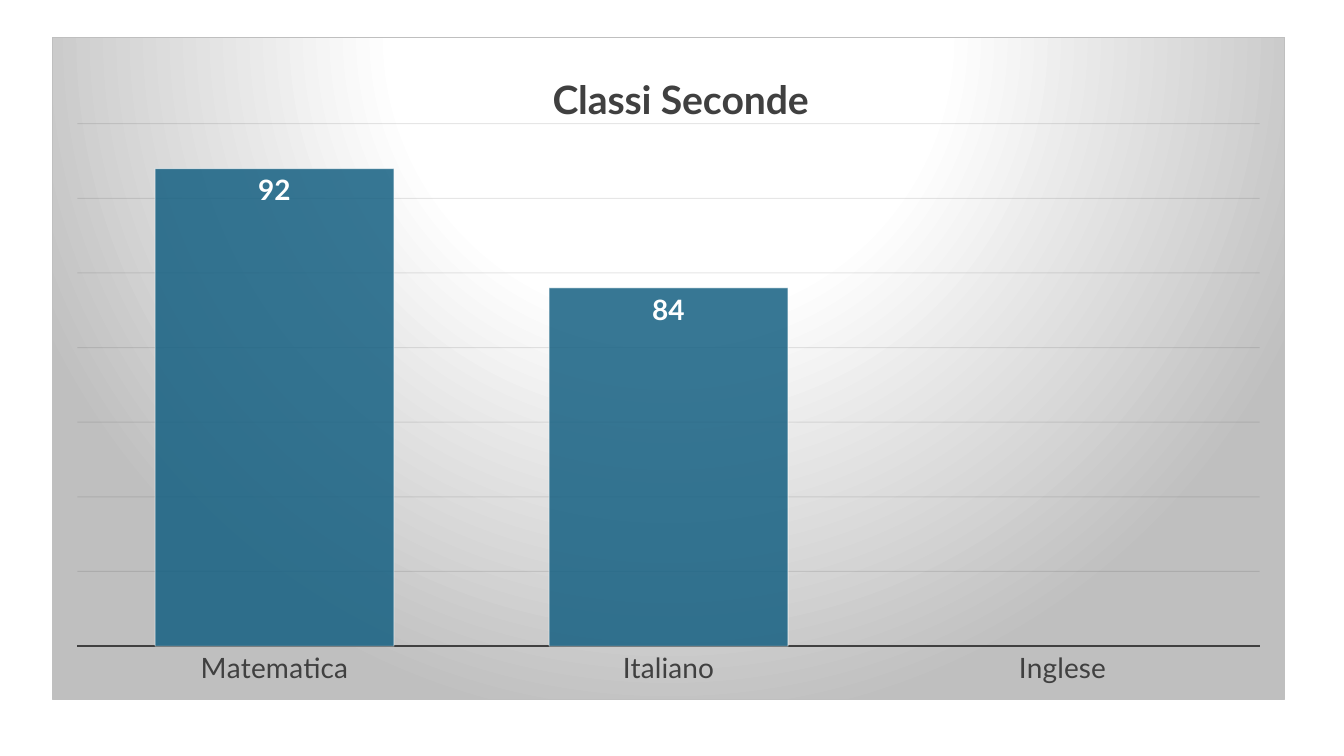
"""Build a slide with a column chart of the scores of the second-year classes."""
from typing import NamedTuple

import lxml.etree
import pptx
import pptx.chart.data
import pptx.dml.color
import pptx.enum.chart
import pptx.oxml
import pptx.oxml.ns
import pptx.util

COLORS = {
    "bar": "156082",
    "text": "404040",
    "grid": "0D0D0D",
    "edge": "BFBFBF",
    "white": "FFFFFF",
}
FONT = "Lato"


class Score(NamedTuple):
    """A subject and its score, if there is one."""

    subject: str
    value: float | None


class Stop(NamedTuple):
    """A gradient stop, with its position in percent."""

    position: int
    color: str


SCORES = [Score("Matematica", 92), Score("Italiano", 84), Score("Inglese", None)]
STOPS = [Stop(0, "white"), Stop(39, "white"), Stop(100, "edge")]


def rgb(name: str) -> pptx.dml.color.RGBColor:
    """Return a named colour."""
    return pptx.dml.color.RGBColor.from_string(COLORS[name])


def style_font(font, size: int, color: str, bold: bool = False) -> None:
    """Set the face, size, colour and weight of a font."""
    font.name = FONT
    font.size = pptx.util.Pt(size)
    font.bold = bold
    font.color.rgb = rgb(color)


def style_line(line, color: str, width: float) -> None:
    """Set the colour and width of a line."""
    line.color.rgb = rgb(color)
    line.width = pptx.util.Pt(width)


def set_opacity(chart, query: str, percent: int) -> None:
    """Set the opacity of the colours that a query finds in the chart."""
    for color in chart.element.xpath(query):
        alpha = lxml.etree.SubElement(color, pptx.oxml.ns.qn("a:alpha"))
        alpha.set("val", str(percent * 1000))


def set_layout(parent, index: int, **fractions: float) -> None:
    """Place a chart part by fractions of the chart's size."""
    for old in parent.findall(pptx.oxml.ns.qn("c:layout")):
        parent.remove(old)
    target = '<c:layoutTarget val="inner"/>' if "w" in fractions else ""
    modes = "".join(f'<c:{k}Mode val="edge"/>' for k in fractions if k in "xy")
    values = "".join(f'<c:{k} val="{v}"/>' for k, v in fractions.items())
    parent.insert(index, pptx.oxml.parse_xml(
        f'<c:layout {pptx.oxml.ns.nsdecls("c")}><c:manualLayout>'
        f"{target}{modes}{values}</c:manualLayout></c:layout>"))


def fill_background(chart) -> None:
    """Give the chart area its radial gradient and thin border."""
    stops = "".join(
        f'<a:gs pos="{s.position * 1000}"><a:srgbClr val="{COLORS[s.color]}"/></a:gs>'
        for s in STOPS)
    area = pptx.oxml.parse_xml(
        f'<c:spPr {pptx.oxml.ns.nsdecls("c", "a")}>'
        f'<a:gradFill><a:gsLst>{stops}</a:gsLst><a:path path="circle">'
        '<a:fillToRect l="50000" t="-80000" r="50000" b="180000"/></a:path></a:gradFill>'
        f'<a:ln w="{pptx.util.Pt(0.75)}"><a:solidFill><a:srgbClr val="{COLORS["edge"]}"/>'
        "</a:solidFill></a:ln></c:spPr>")
    chart.element.find(pptx.oxml.ns.qn("c:txPr")).addprevious(area)


def style_axes(chart) -> None:
    """Style the category axis, and hide the value axis but keep its gridlines."""
    none = pptx.enum.chart.XL_TICK_MARK.NONE
    subjects, values = chart.category_axis, chart.value_axis
    subjects.major_tick_mark = subjects.minor_tick_mark = none
    style_font(subjects.tick_labels.font, 20, "text")
    style_line(subjects.format.line, "text", 1.5)
    values.minimum_scale, values.maximum_scale, values.major_unit = 60, 95, 5
    values.has_major_gridlines = True
    style_line(values.major_gridlines.format.line, "grid", 0.75)
    set_opacity(chart, ".//c:majorGridlines//a:srgbClr", 10)
    values.visible = False


def style_bars(chart) -> None:
    """Style the columns and their value labels."""
    plot = chart.plots[0]
    plot.gap_width = 65
    plot.vary_by_categories = False
    bars = plot.series[0]
    bars.format.fill.solid()
    bars.format.fill.fore_color.rgb = rgb("bar")
    style_line(bars.format.line, "white", 0.75)
    set_opacity(chart, ".//c:ser/c:spPr/a:solidFill/a:srgbClr", 85)
    set_opacity(chart, ".//c:ser/c:spPr/a:ln//a:srgbClr", 50)
    labels = bars.data_labels
    labels.show_value = True
    labels.position = pptx.enum.chart.XL_LABEL_POSITION.INSIDE_END
    labels.number_format = "0"
    labels.number_format_is_linked = False
    style_font(labels.font, 20, "white", bold=True)


def add_score_chart(slide) -> None:
    """Add the score chart to the slide."""
    data = pptx.chart.data.CategoryChartData(number_format="0")
    data.categories = [score.subject for score in SCORES]
    data.add_series("Series 1", [score.value for score in SCORES])
    box = [pptx.util.Cm(n) for n in (1.32, 0.94, 31.06, 16.69)]
    kind = pptx.enum.chart.XL_CHART_TYPE.COLUMN_CLUSTERED
    chart = slide.shapes.add_chart(kind, *box, data).chart
    chart.has_legend = False
    chart.font.name = FONT
    chart.font.size = pptx.util.Pt(10)
    fill_background(chart)
    chart.has_title = True
    p = chart.chart_title.text_frame.paragraphs[0]
    p.text = "Classi Seconde"
    style_font(p.runs[0].font, 28, "text", bold=True)
    set_layout(chart.element.xpath("c:chart/c:title")[0], 1, x=0.4, y=0.04)
    set_layout(chart.element.xpath("c:chart/c:plotArea")[0], 0,
               x=0.02, y=0.13, w=0.96, h=0.79)
    style_axes(chart)
    style_bars(chart)


def main() -> None:
    """Create the presentation and save it."""
    prs = pptx.Presentation()
    prs.slide_width, prs.slide_height = pptx.util.Cm(33.87), pptx.util.Cm(19.05)
    add_score_chart(prs.slides.add_slide(prs.slide_layouts[6]))
    prs.save("out.pptx")


if __name__ == "__main__":
    main()
